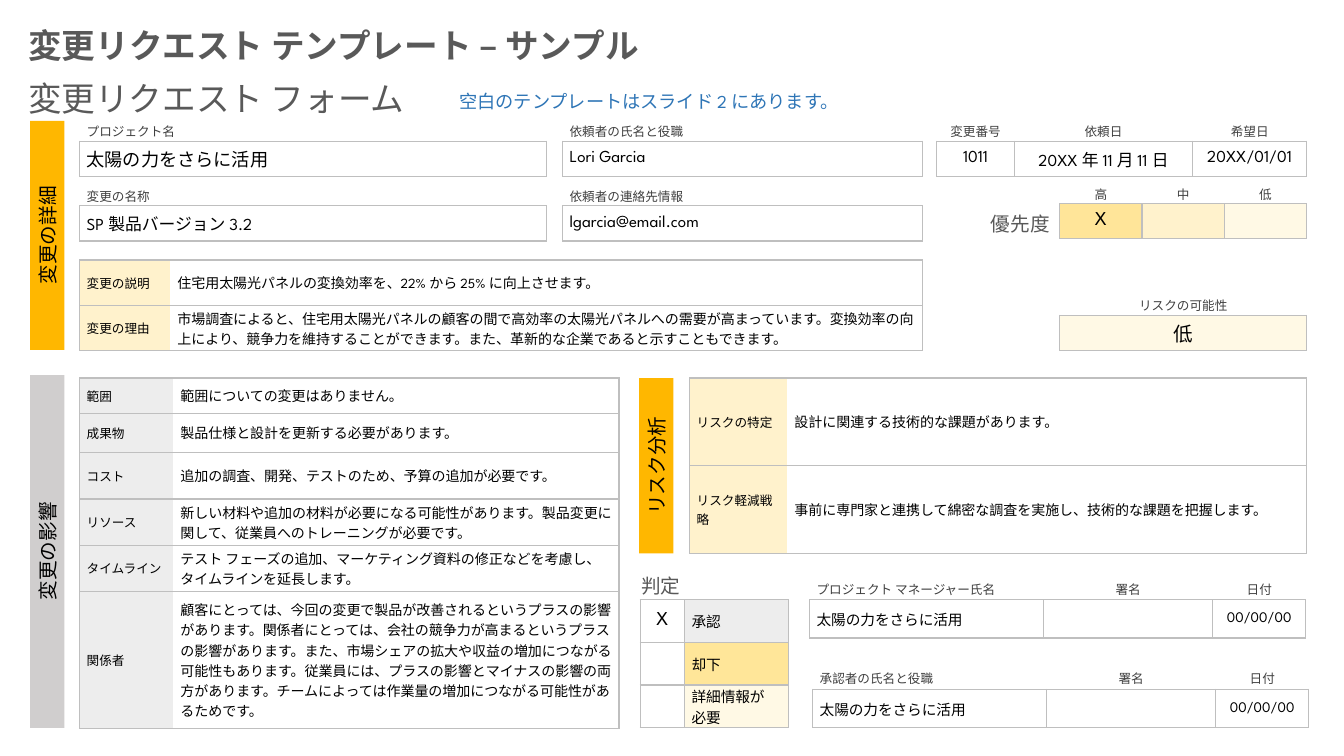
from dataclasses import dataclass
from typing import Optional

from lxml import etree
from pptx import Presentation
from pptx.dml import color
from pptx.enum import shapes, text
from pptx.oxml import ns
from pptx.util import Inches, Pt

LEFT, CENTER, RIGHT = text.PP_ALIGN.LEFT, text.PP_ALIGN.CENTER, text.PP_ALIGN.RIGHT


@dataclass(frozen=True)
class Theme:
    font: str = "League Spartan"
    heading: str = "595959"
    note: str = "2E75B6"
    caption: str = "404040"
    ink: str = "000000"
    border: str = "BFBFBF"
    white: str = "FFFFFF"
    amber: str = "FFB700"
    gray: str = "D0CECE"
    light_gray: str = "EDEDED"
    high: str = "FFE599"
    rejected: str = "FFE699"
    medium: str = "FFF2CC"
    low: str = "FFF9E5"
    title_size: float = 24
    section_size: float = 14
    entry_size: float = 12
    large_size: float = 13
    sign_size: float = 10.5
    body_size: float = 10
    caption_size: float = 9


THEME = Theme()


@dataclass(frozen=True)
class Label:
    words: str
    box: tuple[float, float, float, float]
    size: float
    ink: str = THEME.heading
    align: text.PP_ALIGN = LEFT
    spacing: float = 1.0


@dataclass(frozen=True)
class Bar:
    words: str
    left: float
    top: float
    length: float
    fill: str


@dataclass(frozen=True)
class Cell:
    words: str = ""
    size: float = THEME.body_size
    fill: Optional[str] = THEME.white
    align: text.PP_ALIGN = LEFT
    sides: str = "LRTB"
    ink: str = THEME.ink


@dataclass(frozen=True)
class Field:
    caption: str
    entry: str = ""
    size: float = THEME.entry_size
    align: text.PP_ALIGN = LEFT
    fill: str = THEME.white
    caption_align: Optional[text.PP_ALIGN] = None


@dataclass(frozen=True)
class Grid:
    left: float
    top: float
    columns: list[float]
    rows: list[float]
    cells: list[list[Cell]]


def form(left: float, top: float, columns: list[float], fields: list[Field],
         rows: tuple[float, float] = (0.2, 0.35)) -> Grid:
    """Captions above a row of bordered entry boxes."""
    captions = [Cell(f.caption, THEME.caption_size, None, f.caption_align or f.align, "B", THEME.caption)
                for f in fields]
    entries = [Cell(f.entry, f.size, f.fill, f.align) for f in fields]
    return Grid(left, top, columns, list(rows), [captions, entries])


def details(left: float, top: float, columns: list[float], rows: list[float], fill: str,
            pairs: list[tuple[str, str]]) -> Grid:
    """Tinted names beside their explanations."""
    cells = [[Cell(name, THEME.caption_size, fill, sides="LTB"), Cell(words, sides="RTB")]
             for name, words in pairs]
    return Grid(left, top, columns, rows, cells)


def signature(left: float, top: float, role: str) -> Grid:
    size = THEME.sign_size
    fields = [Field(role, "太陽の力をさらに活用", size), Field("署名", size=size, align=CENTER),
              Field("日付", "00/00/00", size, CENTER)]
    return form(left, top, [2.32, 1.68, 0.92], fields, (0.22, 0.38))


def write(frame, words: str, size: float, ink: str, align: text.PP_ALIGN,
          spacing: float = 1.0, bold: bool = False) -> None:
    frame.text = words
    paragraph = frame.paragraphs[0]
    for name, value in {"alignment": align, "line_spacing": spacing}.items():
        setattr(paragraph, name, value)
    for run in paragraph.runs:
        for name, value in {"name": THEME.font, "size": Pt(size), "bold": bold}.items():
            setattr(run.font, name, value)
        run.font.color.rgb = color.RGBColor.from_string(ink)


def add_label(slide, label: Label) -> None:
    frame = slide.shapes.add_textbox(*map(Inches, label.box)).text_frame
    frame.word_wrap = True
    write(frame, label.words, label.size, label.ink, label.align, label.spacing)


def add_bar(slide, bar: Bar, width: float = 0.34) -> None:
    """Turn a horizontal bar about its centre so that it reads upwards."""
    left = bar.left + (width - bar.length) / 2
    top = bar.top + (bar.length - width) / 2
    shape = slide.shapes.add_shape(shapes.MSO_SHAPE.RECTANGLE, *map(Inches, (left, top, bar.length, width)))
    shape.rotation = 270
    shape.shadow.inherit = False
    shape.fill.solid()
    shape.fill.fore_color.rgb = color.RGBColor.from_string(bar.fill)
    shape.line.fill.background()
    shape.text_frame.vertical_anchor = text.MSO_ANCHOR.MIDDLE
    write(shape.text_frame, bar.words, THEME.section_size, THEME.ink, CENTER)


def set_borders(table_cell, sides: str) -> None:
    properties = table_cell._tc.get_or_add_tcPr()
    for side in "LRTB":
        line = etree.SubElement(properties, ns.qn(f"a:ln{side}"), w=str(Pt(1)))
        if side in sides:
            fill = etree.SubElement(line, ns.qn("a:solidFill"))
            etree.SubElement(fill, ns.qn("a:srgbClr"), val=THEME.border)
        else:
            etree.SubElement(line, ns.qn("a:noFill"))


def add_grid(slide, grid: Grid) -> None:
    size = (grid.left, grid.top, sum(grid.columns), sum(grid.rows))
    table = slide.shapes.add_table(len(grid.rows), len(grid.columns), *map(Inches, size)).table
    table.first_row = table.horz_banding = False
    for column, width in zip(table.columns, grid.columns):
        column.width = Inches(width)
    for row, height, cells in zip(table.rows, grid.rows, grid.cells):
        row.height = Inches(height)
        for table_cell, cell in zip(row.cells, cells):
            layout = {"margin_left": Inches(0.07), "margin_right": Inches(0.07), "margin_top": 0,
                      "margin_bottom": 0, "vertical_anchor": text.MSO_ANCHOR.MIDDLE}
            for name, value in layout.items():
                setattr(table_cell, name, value)
            set_borders(table_cell, cell.sides)
            if cell.fill:
                table_cell.fill.solid()
                table_cell.fill.fore_color.rgb = color.RGBColor.from_string(cell.fill)
            else:
                table_cell.fill.background()
            write(table_cell.text_frame, cell.words, cell.size, cell.ink, cell.align)


LABELS = [
    Label("空白のテンプレートはスライド 2 にあります。", (4.46, 0.85, 5.4, 0.32), THEME.large_size, THEME.note),
    Label("変更リクエスト フォーム", (0.18, 0.66, 6.34, 0.53), THEME.title_size, spacing=1.15),
    Label("優先度", (9.29, 2.02, 1.22, 0.35), THEME.section_size, align=RIGHT, spacing=1.15),
    Label("判定", (6.26, 5.61, 1.64, 0.35), THEME.section_size, spacing=1.15),
]
BARS = [
    Bar("変更の詳細", 0.3, 1.2, 2.27, THEME.amber),
    Bar("変更の影響", 0.3, 3.72, 3.5, THEME.gray),
    Bar("リスク分析", 6.34, 3.75, 1.74, THEME.amber),
]
DECISIONS = [("X", "承認", THEME.light_gray), ("", "却下", THEME.rejected), ("", "詳細情報が\v必要", THEME.low)]
GRIDS = [
    # Request details
    form(0.79, 1.2, [4.63], [Field("プロジェクト名", "太陽の力をさらに活用", THEME.large_size)]),
    form(0.79, 1.84, [4.63], [Field("変更の名称", "SP 製品バージョン 3.2")]),
    form(5.58, 1.2, [3.57], [Field("依頼者の氏名と役職", "Lori Garcia")]),
    form(5.58, 1.84, [3.57], [Field("依頼者の連絡先情報", "lgarcia@email.com")]),
    form(9.29, 1.2, [0.77, 1.77, 1.13], [
        Field("変更番号", "1011", align=CENTER), Field("依頼日", "20XX 年 11 月 11 日", align=CENTER),
        Field("希望日", "20XX/01/01", align=CENTER)]),
    form(10.51, 1.82, [2.45 / 3] * 3, [
        Field("高", "X", THEME.section_size, CENTER, THEME.high),
        Field("中", align=CENTER, fill=THEME.medium), Field("低", align=CENTER, fill=THEME.low)]),
    form(10.51, 2.93, [2.45], [Field("リスクの可能性", "低", THEME.section_size, CENTER, THEME.low)]),
    details(0.79, 2.58, [0.9, 7.46], [0.45] * 2, THEME.medium, [
        ("変更の説明", "住宅用太陽光パネルの変換効率を、22% から 25% に向上させます。"),
        ("変更の理由", "市場調査によると、住宅用太陽光パネルの顧客の間で高効率の太陽光パネルへの需要が高まっています。変換効率の向上により、競争力を維持することができます。また、革新的な企業であると示すこともできます。")]),
    # Impact and risk
    details(0.79, 3.75, [0.93, 4.42], [0.35, 0.39, 0.46, 0.46, 0.46, 1.36], THEME.light_gray, [
        ("範囲", "範囲についての変更はありません。"),
        ("成果物", "製品仕様と設計を更新する必要があります。"),
        ("コスト", "追加の調査、開発、テストのため、予算の追加が必要です。"),
        ("リソース", "新しい材料や追加の材料が必要になる可能性があります。製品変更に関して、従業員へのトレーニングが必要です。"),
        ("タイムライン", "テスト フェーズの追加、マーケティング資料の修正などを考慮し、タイムラインを延長します。"),
        ("関係者", "顧客にとっては、今回の変更で製品が改善されるというプラスの影響があります。関係者にとっては、会社の競争力が高まるというプラスの影響があります。また、市場シェアの拡大や収益の増加につながる可能性もあります。従業員には、プラスの影響とマイナスの影響の両方があります。チームによっては作業量の増加につながる可能性があるためです。")]),
    details(6.84, 3.75, [0.97, 5.15], [0.87] * 2, THEME.medium, [
        ("リスクの特定", "設計に関連する技術的な課題があります。"),
        ("リスク軽減戦略", "事前に専門家と連携して綿密な調査を実施し、技術的な課題を把握します。")]),
    # Decision and signatures
    Grid(6.35, 5.95, [0.44, 1.03], [1.27 / 3] * 3, [
        [Cell(mark, THEME.section_size, align=CENTER), Cell(choice, THEME.sign_size, fill)]
        for mark, choice, fill in DECISIONS]),
    signature(8.03, 5.73, "プロジェクト マネージャー氏名"),
    signature(8.06, 6.62, "承認者の氏名と役職"),
]


def main() -> None:
    presentation = Presentation()
    presentation.slide_width, presentation.slide_height = Inches(13.33), Inches(7.5)
    slide = presentation.slides.add_slide(presentation.slide_layouts[5])
    # Title
    title = slide.shapes.title
    for name, value in {"left": 0.18, "top": 0.2, "width": 9.13, "height": 0.5}.items():
        setattr(title, name, Inches(value))
    title.text_frame.vertical_anchor = text.MSO_ANCHOR.TOP
    write(title.text_frame, "変更リクエスト テンプレート – サンプル", THEME.title_size, THEME.heading, LEFT, bold=True)
    # Form
    for draw, items in ((add_label, LABELS), (add_bar, BARS), (add_grid, GRIDS)):
        for item in items:
            draw(slide, item)
    presentation.save("out.pptx")


if __name__ == "__main__":
    main()
